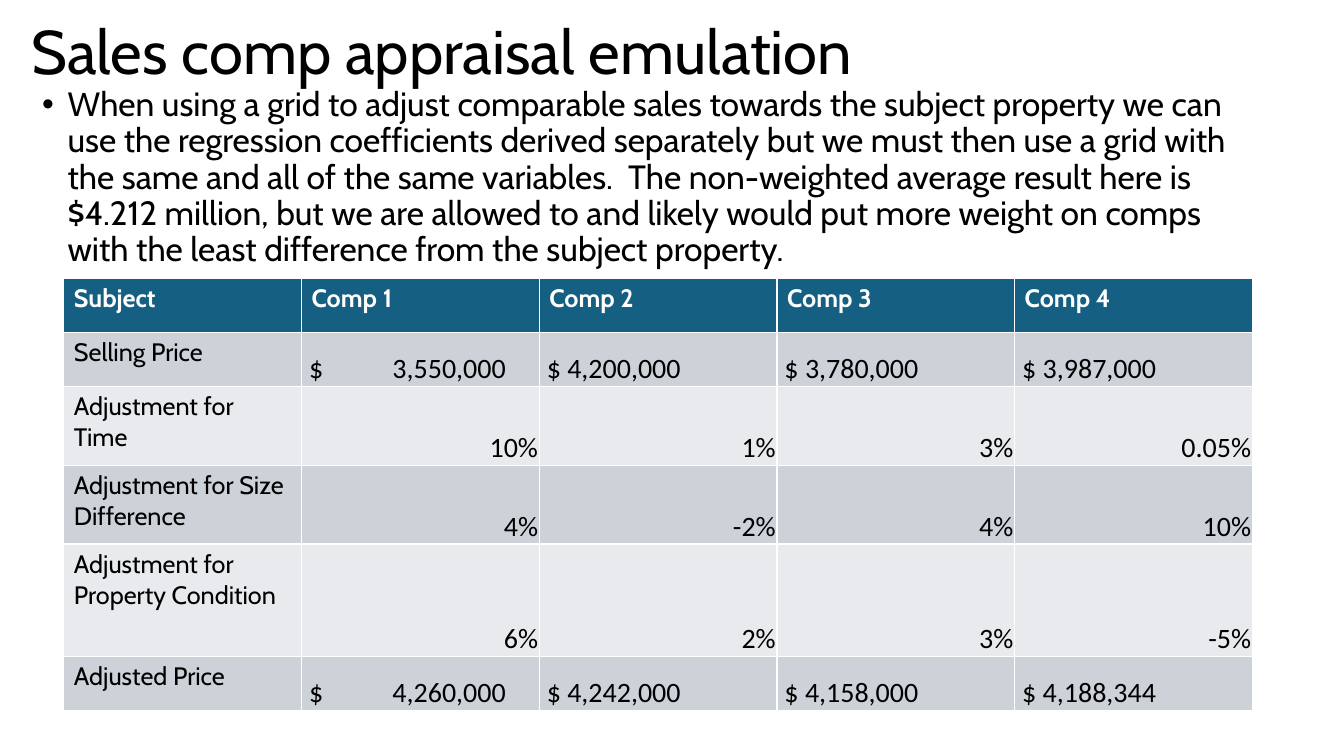
from lxml import etree
from pptx import Presentation
from pptx.dml.color import RGBColor
from pptx.enum.text import MSO_ANCHOR, MSO_AUTO_SIZE, PP_ALIGN
from pptx.oxml.ns import qn
from pptx.util import Cm, Pt

TOP, MIDDLE, BOTTOM = MSO_ANCHOR.TOP, MSO_ANCHOR.MIDDLE, MSO_ANCHOR.BOTTOM
LEFT, RIGHT = PP_ALIGN.LEFT, PP_ALIGN.RIGHT
NO_AUTOFIT = MSO_AUTO_SIZE.NONE

BLACK = RGBColor(0x00, 0x00, 0x00)
WHITE = RGBColor(0xFF, 0xFF, 0xFF)
HEADER_BLUE = RGBColor(0x15, 0x60, 0x82)
BANDS = (RGBColor(0xE8, 0xEA, 0xED), RGBColor(0xCC, 0xD2, 0xD8))

HEADING = "Sales comp appraisal emulation"
EXPLANATION = (
    "When using a grid to adjust comparable sales towards the subject property "
    "we can use the regression coefficients derived separately but we must then "
    "use a grid with the same and all of the same variables.  The non-weighted "
    "average result here is $4.212 million, but we are allowed to and likely "
    "would put more weight on comps with the least difference from the subject "
    "property."
)
COMPS_GRID = [
    ("Subject", "Comp 1", "Comp 2", "Comp 3", "Comp 4"),
    ("Selling Price", "$\t3,550,000", "$ 4,200,000", "$ 3,780,000", "$ 3,987,000"),
    ("Adjustment for Time", "10%", "1%", "3%", "0.05%"),
    ("Adjustment for Size Difference", "4%", "-2%", "4%", "10%"),
    ("Adjustment for Property Condition", "6%", "2%", "3%", "-5%"),
    ("Adjusted Price", "$\t4,260,000", "$ 4,242,000", "$ 4,158,000", "$ 4,188,344"),
]
COLUMN_WIDTH = Cm(5.99)
ROW_HEIGHTS = [Cm(h) for h in (1.36, 1.36, 1.99, 1.99, 2.83, 1.36)]
PRICE_TAB = Cm(2.1)


def place(placeholder, left, top, width, height, anchor):
    """Move a placeholder and fix its text anchor."""
    placeholder.left, placeholder.top = Cm(left), Cm(top)
    placeholder.width, placeholder.height = Cm(width), Cm(height)
    frame = placeholder.text_frame
    frame.word_wrap = True
    frame.auto_size = NO_AUTOFIT
    frame.vertical_anchor = anchor
    return frame.paragraphs[0]


def write(paragraph, text, size, font="Cabin", color=BLACK, bold=False, align=LEFT):
    """Add one formatted run to a paragraph."""
    paragraph.alignment = align
    run = paragraph.add_run()
    run.text = text
    run.font.name = font
    run.font.size = Pt(size)
    run.font.bold = bold
    run.font.color.rgb = color


def add_tab_stop(paragraph, position):
    """Give a paragraph one left tab stop."""
    stops = etree.SubElement(paragraph._p.get_or_add_pPr(), qn("a:tabLst"))
    etree.SubElement(stops, qn("a:tab"), pos=str(int(position)), algn="l")


def fill_value(cell, text):
    """Write a price or a percentage at the bottom of its cell."""
    is_price = text.startswith("$")
    cell.vertical_anchor = BOTTOM
    cell.margin_left = Cm(0.19) if is_price else Cm(0.03)
    cell.margin_right = cell.margin_top = Cm(0.03)
    cell.margin_bottom = 0
    amount = cell.text_frame.paragraphs[0]
    write(amount, text, 20, "Calibri", align=LEFT if is_price else RIGHT)
    if "\t" in text:
        add_tab_stop(amount, PRICE_TAB)


def add_comps_grid(slide):
    """Build the adjustment grid of the comparable sales."""
    rows, columns = len(COMPS_GRID), len(COMPS_GRID[0])
    grid = slide.shapes.add_table(
        rows, columns, Cm(1.61), Cm(7.01), COLUMN_WIDTH * columns, sum(ROW_HEIGHTS)
    ).table
    for column in grid.columns:
        column.width = COLUMN_WIDTH
    for r, (entries, height) in enumerate(zip(COMPS_GRID, ROW_HEIGHTS)):
        grid.rows[r].height = height
        for c, text in enumerate(entries):
            cell = grid.cell(r, c)
            cell.fill.solid()
            cell.fill.fore_color.rgb = BANDS[r % 2] if r else HEADER_BLUE
            if r and c:
                fill_value(cell, text)
            else:
                label = cell.text_frame.paragraphs[0]
                write(label, text, 18, color=BLACK if r else WHITE, bold=r == 0)


def main():
    """Build and save the slide."""
    deck = Presentation()
    deck.slide_width, deck.slide_height = Cm(33.87), Cm(19.05)
    slide = deck.slides.add_slide(deck.slide_layouts[1])

    heading = place(slide.shapes.title, 0.53, 0.23, 30.99, 2.31, MIDDLE)
    heading.line_spacing = 0.9
    write(heading, HEADING, 44)

    explanation = place(slide.placeholders[1], 0.81, 2.08, 30.73, 15.09, TOP)
    explanation.line_spacing = 0.9
    explanation.space_before = Pt(10)
    indent = Cm(0.64)
    properties = explanation._p.get_or_add_pPr()
    properties.set("marL", str(int(indent)))
    properties.set("indent", str(-int(indent)))
    write(explanation, EXPLANATION, 24)

    add_comps_grid(slide)
    deck.save("out.pptx")


if __name__ == "__main__":
    main()
